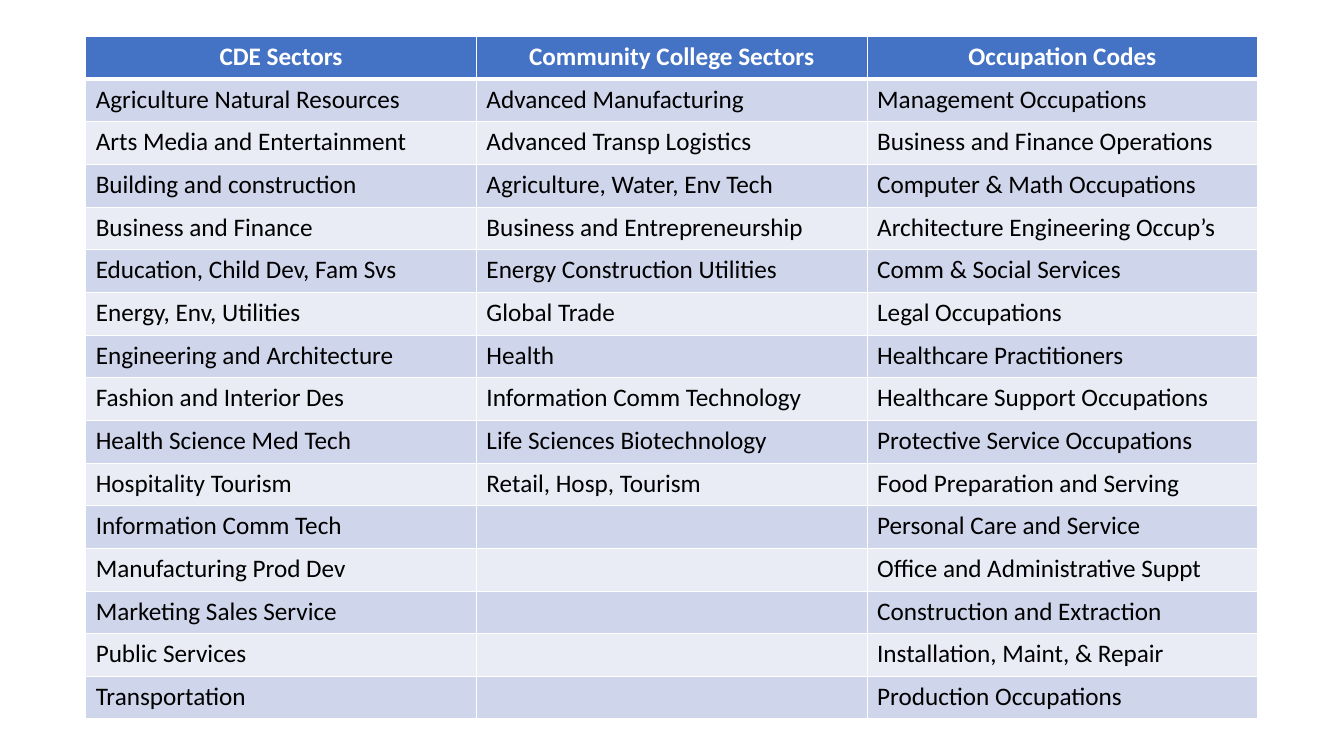
"""Build a slide with a table of sectors and occupation codes."""
from itertools import zip_longest

from lxml.etree import SubElement
from pptx import Presentation
from pptx.dml.color import RGBColor
from pptx.enum.text import PP_ALIGN as Align
from pptx.oxml.ns import qn
from pptx.util import Cm, Pt

SECTORS = {
    "CDE Sectors": [
        "Agriculture Natural Resources", "Arts Media and Entertainment",
        "Building and construction", "Business and Finance",
        "Education, Child Dev, Fam Svs", "Energy, Env, Utilities",
        "Engineering and Architecture", "Fashion and Interior Des",
        "Health Science Med Tech", "Hospitality Tourism",
        "Information Comm Tech", "Manufacturing Prod Dev",
        "Marketing Sales Service", "Public Services", "Transportation",
    ],
    "Community College Sectors": [
        "Advanced Manufacturing", "Advanced Transp Logistics",
        "Agriculture, Water, Env Tech", "Business and Entrepreneurship",
        "Energy Construction Utilities", "Global Trade", "Health",
        "Information Comm Technology", "Life Sciences Biotechnology",
        "Retail, Hosp, Tourism",
    ],
    "Occupation Codes": [
        "Management Occupations", "Business and Finance Operations",
        "Computer & Math Occupations", "Architecture Engineering Occup’s",
        "Comm & Social Services", "Legal Occupations",
        "Healthcare Practitioners", "Healthcare Support Occupations",
        "Protective Service Occupations", "Food Preparation and Serving",
        "Personal Care and Service", "Office and Administrative Suppt",
        "Construction and Extraction", "Installation, Maint, & Repair",
        "Production Occupations",
    ],
}
COLORS = {
    "header": "4472C4", "odd": "CFD5EA", "even": "E9EBF5",
    "border": "FFFFFF", "header_text": "FFFFFF", "text": "000000",
}


def rgb(name):
    return RGBColor.from_string(COLORS[name])


def add_borders(cell, top, bottom):
    properties = cell._tc.get_or_add_tcPr()
    for side, points in (("L", 1), ("R", 1), ("T", top), ("B", bottom)):
        line = SubElement(properties, qn(f"a:ln{side}"), w=str(Pt(points)))
        fill = SubElement(line, qn("a:solidFill"))
        SubElement(fill, qn("a:srgbClr"), val=COLORS["border"])


def fill_cell(cell, entry, row):
    is_header = row == 0
    add_borders(cell, 3 if row == 1 else 1, 3 if is_header else 1)
    band = "header" if is_header else "odd" if row % 2 else "even"
    cell.fill.solid()
    cell.fill.fore_color.rgb = rgb(band)
    cell.text_frame.text = entry
    paragraph = cell.text_frame.paragraphs[0]
    paragraph.alignment = Align.CENTER if is_header else Align.LEFT
    for run in paragraph.runs:
        run.font.name = "Calibri"
        run.font.size = Pt(18)
        run.font.bold = is_header
        run.font.color.rgb = rgb("header_text" if is_header else "text")


def main():
    deck = Presentation()
    deck.slide_width, deck.slide_height = Cm(33.87), Cm(19.05)
    slide = deck.slides.add_slide(deck.slide_layouts[6])
    rows = [tuple(SECTORS), *zip_longest(*SECTORS.values(), fillvalue="")]
    sector_table = slide.shapes.add_table(
        len(rows), len(SECTORS), Cm(2.16), Cm(0.92), Cm(29.54), Cm(17.2)
    ).table
    for row, entries in enumerate(rows):
        for column, entry in enumerate(entries):
            fill_cell(sector_table.cell(row, column), entry, row)
    deck.save("out.pptx")


if __name__ == "__main__":
    main()
